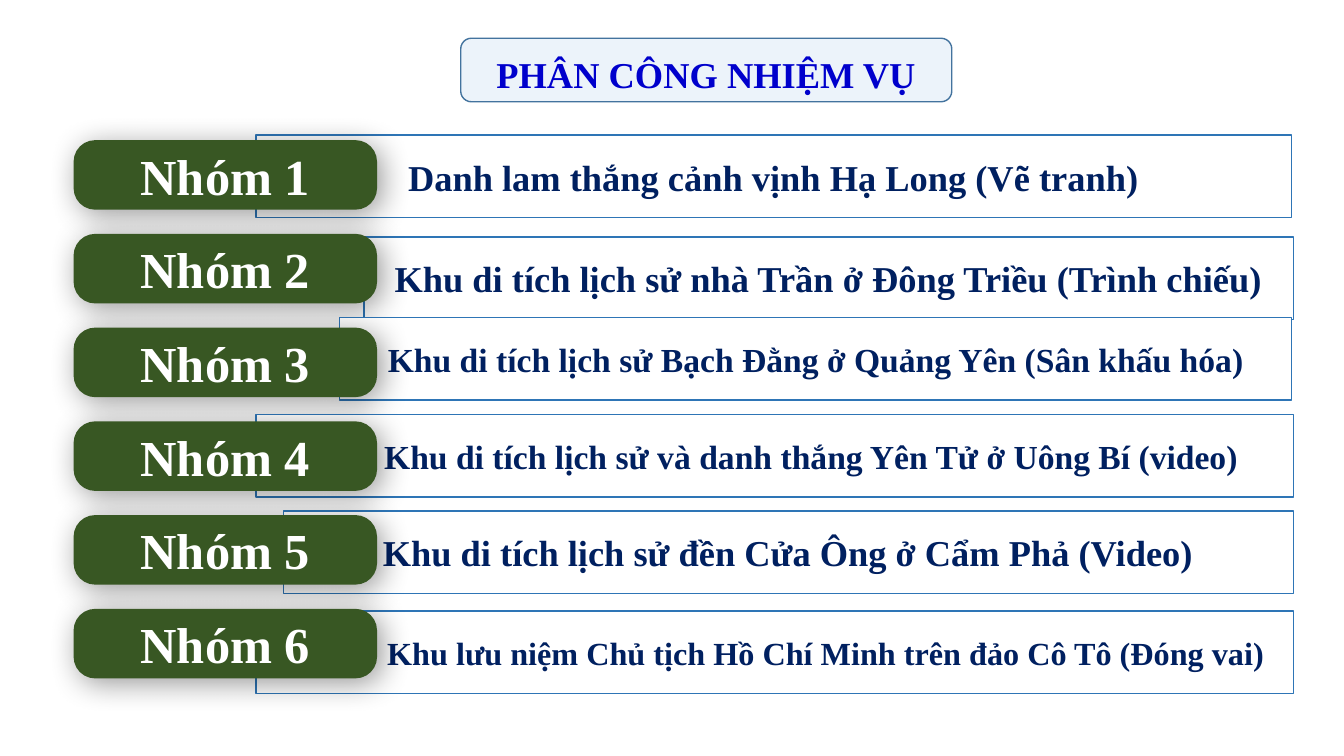
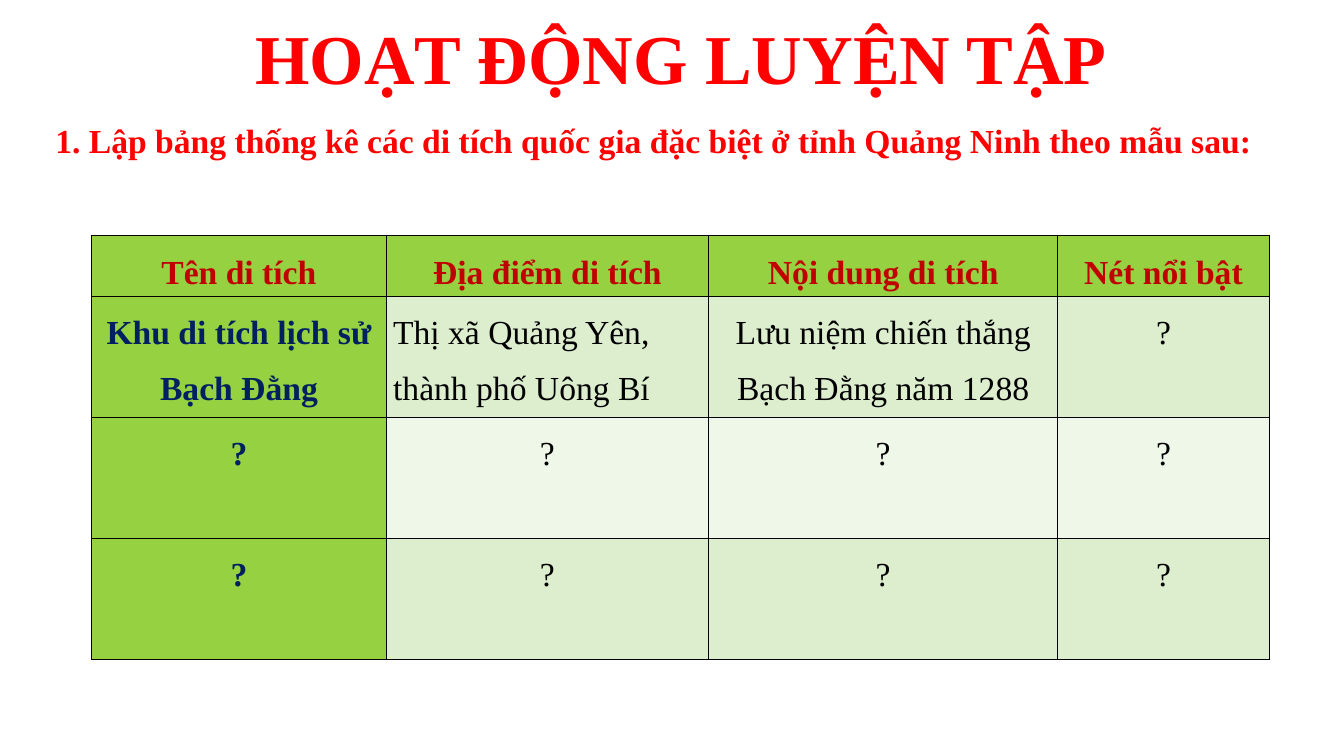
"""Build the group assignment and practice table slides."""
from dataclasses import dataclass

import pptx
import pptx.dml.color
import pptx.enum.shapes
import pptx.enum.text
import pptx.oxml
import pptx.oxml.ns
import pptx.util

Inches = pptx.util.Inches
Pt = pptx.util.Pt
RGB = pptx.dml.color.RGBColor.from_string
Shape = pptx.enum.shapes.MSO_SHAPE
Align = pptx.enum.text.PP_ALIGN
Anchor = pptx.enum.text.MSO_ANCHOR


@dataclass(frozen=True)
class Theme:
    font: str = "Times New Roman"
    white: str = "FFFFFF"
    black: str = "000000"
    blue: str = "0000CC"
    navy: str = "002060"
    red: str = "FF0000"
    dark_red: str = "C00000"
    pale_blue: str = "ECF3FA"
    title_edge: str = "43739E"
    task_edge: str = "2E75B6"
    pill_green: str = "385723"
    head_green: str = "96D141"
    row_greens: tuple = ("DDEECF", "EFF7E9")
    banner: int = 50
    pill: int = 36
    heading: int = 26
    body: int = 24
    small: int = 23


THEME = Theme()

ASSIGNMENT_TITLE = "PHÂN CÔNG NHIỆM VỤ"
TASK_HEIGHT = 0.82
# text, left, top, width, size, left text margin (None centres the text)
TASKS = [
    ("Danh lam thắng cảnh vịnh Hạ Long (Vẽ tranh)",
     2.54, 1.34, 10.27, THEME.heading, None),
    ("Khu di tích lịch sử nhà Trần ở Đông Triều (Trình chiếu)",
     3.61, 2.35, 9.22, THEME.heading, None),
    ("Khu di tích lịch sử Bạch Đằng ở Quảng Yên (Sân khấu hóa)",
     3.37, 3.15, 9.44, THEME.body, None),
    ("Khu di tích lịch sử và danh thắng Yên Tử ở Uông Bí (video)",
     2.54, 4.11, 10.29, THEME.body, 1.27),
    ("Khu di tích lịch sử đền Cửa Ông ở Cẩm Phả (Video)",
     2.81, 5.07, 10.02, THEME.heading, None),
    ("Khu lưu niệm Chủ tịch Hồ Chí Minh trên đảo Cô Tô (Đóng vai)",
     2.54, 6.06, 10.29, THEME.small, 1.3),
]
PILL_TOP, PILL_PITCH = 1.39, 0.93

PRACTICE_TITLE = "HOẠT ĐỘNG LUYỆN TẬP"
EXERCISE = "1. Lập bảng thống kê các di tích quốc gia đặc biệt ở tỉnh Quảng Ninh theo mẫu sau:"
RELICS = [
    ("Tên di tích", "Địa điểm di tích", "Nội dung di tích", "Nét nổi bật"),
    ("Khu di tích lịch sử Bạch Đằng", "Thị xã Quảng Yên, thành phố Uông Bí",
     "Lưu niệm chiến thắng Bạch Đằng năm 1288", "?"),
    ("?", "?", "?", "?"),
    ("?", "?", "?", "?"),
]
COLUMN_WIDTHS = (2.92, 3.2, 3.46, 2.1)
ROW_HEIGHTS = (0.6, 1.2, 1.2, 1.2)


def apply(target, values):
    for name, value in values.items():
        setattr(target, name, value)


def paint(target, color):
    target.fill.solid()
    target.fill.fore_color.rgb = RGB(color)


def write(frame, text, size, color, bold=True, align=Align.CENTER, spacing=1.0):
    paragraph = frame.paragraphs[0]
    apply(paragraph, {"alignment": align, "line_spacing": spacing})
    run = paragraph.add_run()
    run.text = text
    apply(run.font, {"name": THEME.font, "size": Pt(size), "bold": bold})
    run.font.color.rgb = RGB(color)


def add_box(slide, kind, place, fill, edge=None):
    box = slide.shapes.add_shape(kind, *map(Inches, place))
    box.shadow.inherit = False
    paint(box, fill)
    if edge:
        box.line.color.rgb = RGB(edge)
        box.line.width = Pt(1)
    else:
        box.line.fill.background()
    apply(box.text_frame, {"word_wrap": True, "vertical_anchor": Anchor.MIDDLE})
    return box


def place_title(slide, place, text, size, color, frame_format, spacing=1.0):
    title = slide.shapes.title
    apply(title, dict(zip(("left", "top", "width", "height"), map(Inches, place))))
    apply(title.text_frame, {"word_wrap": True,
                             "auto_size": pptx.enum.text.MSO_AUTO_SIZE.NONE,
                             **frame_format})
    write(title.text_frame, text, size, color, spacing=spacing)


def cast_shadow(box):
    effects = box._element.spPr.find(pptx.oxml.ns.qn("a:effectLst"))
    effects.append(pptx.oxml.parse_xml(
        f'<a:outerShdw {pptx.oxml.ns.nsdecls("a")} blurRad="{Pt(22)}" dist="{Pt(5)}" '
        f'dir="{45 * 60000}" algn="tl" rotWithShape="0"><a:srgbClr val="{THEME.black}">'
        '<a:alpha val="40000"/></a:srgbClr></a:outerShdw>'))


def add_borders(cell):
    properties = cell._tc.get_or_add_tcPr()
    for position, side in enumerate(("lnL", "lnR", "lnT", "lnB")):
        properties.insert(position, pptx.oxml.parse_xml(
            f'<a:{side} {pptx.oxml.ns.nsdecls("a")} w="{Pt(1)}"><a:solidFill>'
            f'<a:srgbClr val="{THEME.black}"/></a:solidFill></a:{side}>'))


def build_assignment(slide):
    title_place = (4.57, 0.38, 4.87, 0.63)
    title_frame = add_box(slide, Shape.ROUNDED_RECTANGLE, title_place,
                          THEME.pale_blue, THEME.title_edge)
    slide.shapes.title._element.addprevious(title_frame._element)
    place_title(slide, title_place, ASSIGNMENT_TITLE, THEME.heading, THEME.blue,
                {"vertical_anchor": Anchor.MIDDLE}, 1.2)

    for index, (text, left, top, width, size, margin) in enumerate(TASKS):
        task = add_box(slide, Shape.RECTANGLE, (left, top, width, TASK_HEIGHT),
                       THEME.white, THEME.task_edge)
        if margin:
            task.text_frame.margin_left = Inches(margin)
        write(task.text_frame, text, size, THEME.navy,
              align=Align.LEFT if margin else Align.CENTER)

        group = add_box(slide, Shape.ROUNDED_RECTANGLE,
                        (0.73, PILL_TOP + index * PILL_PITCH, 3.01, 0.69), THEME.pill_green)
        group.adjustments[0] = 0.31
        cast_shadow(group)
        write(group.text_frame, f"Nhóm {index + 1}", THEME.pill, THEME.white)


def build_practice(slide):
    place_title(slide, (1.94, 0.09, 9.44, 0.94), PRACTICE_TITLE, THEME.banner, THEME.red,
                {"vertical_anchor": Anchor.TOP, "margin_left": Inches(0.3)})
    paint(slide.shapes.title, THEME.white)
    exercise = slide.shapes.add_textbox(*map(Inches, (0.45, 1.14, 12.42, 0.5)))
    exercise.text_frame.word_wrap = True
    write(exercise.text_frame, EXERCISE, THEME.body, THEME.red, align=Align.LEFT)

    relics = slide.shapes.add_table(
        len(RELICS), len(COLUMN_WIDTHS), Inches(0.91), Inches(2.34),
        Inches(sum(COLUMN_WIDTHS)), Inches(sum(ROW_HEIGHTS))).table
    apply(relics, {"first_row": False, "horz_banding": False})
    for column, width in zip(relics.columns, COLUMN_WIDTHS):
        column.width = Inches(width)
    for row, height in zip(relics.rows, ROW_HEIGHTS):
        row.height = Inches(height)

    for r, texts in enumerate(RELICS):
        for c, text in enumerate(texts):
            cell = relics.cell(r, c)
            heading = r == 0 or c == 0
            color = THEME.dark_red if r == 0 else THEME.navy if c == 0 else THEME.black
            apply(cell, {"margin_left": Inches(0.07), "margin_right": Inches(0.07),
                         "margin_top": 0, "margin_bottom": 0})
            paint(cell, THEME.head_green if heading else THEME.row_greens[(r - 1) % 2])
            add_borders(cell)
            write(cell.text_frame, text, THEME.body, color, heading,
                  Align.LEFT if (r, c) == (1, 1) else Align.CENTER, 1.5)


def main():
    deck = pptx.Presentation()
    apply(deck, {"slide_width": Inches(13.33), "slide_height": Inches(7.5)})
    title_only = deck.slide_layouts[5]
    for build in (build_assignment, build_practice):
        build(deck.slides.add_slide(title_only))
    deck.save("out.pptx")


if __name__ == "__main__":
    main()
